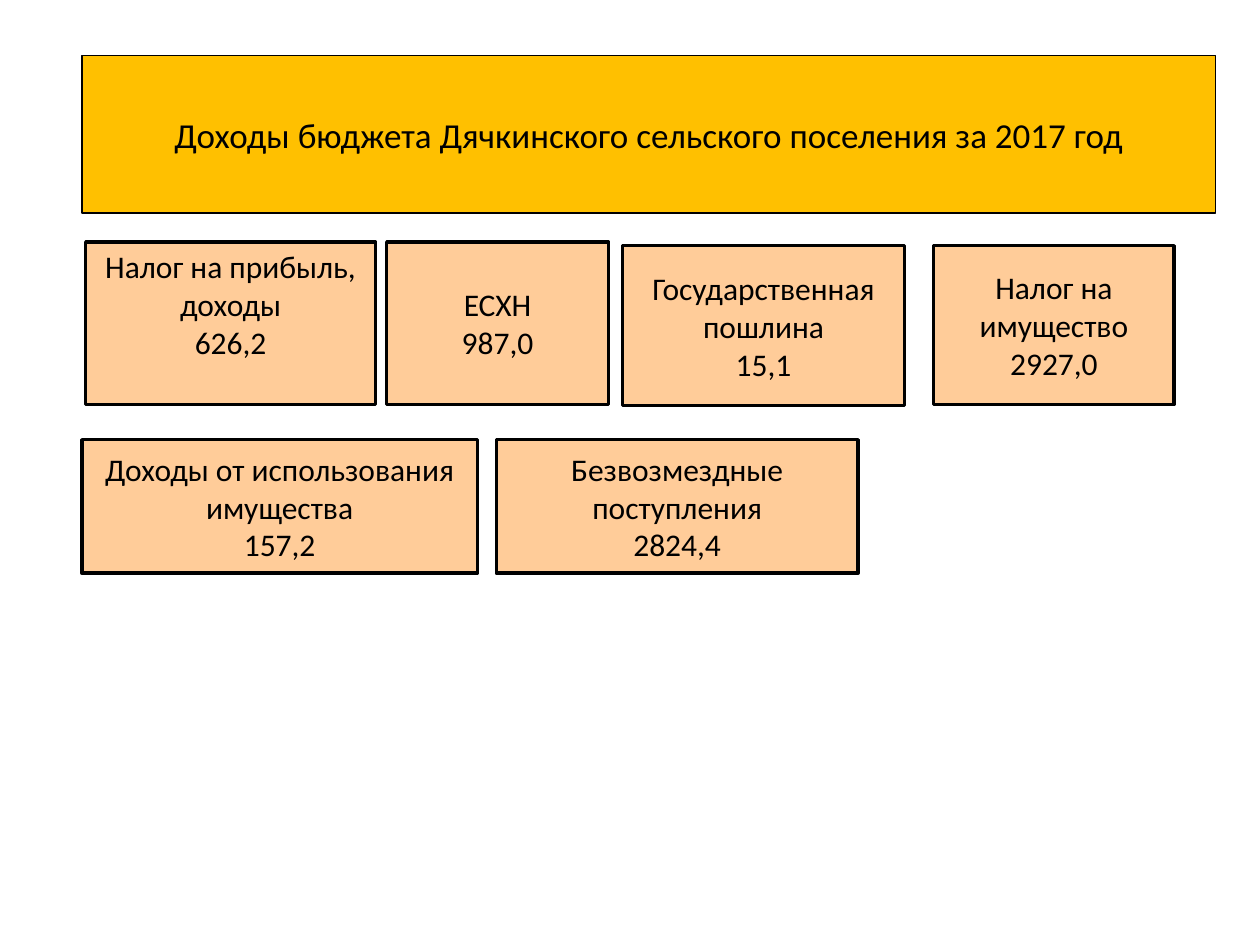
import pptx
import pptx.util
import pptx.dml.color
import pptx.enum.shapes
import pptx.enum.text

Pt = pptx.util.Pt
BLACK = pptx.dml.color.RGBColor(0x00, 0x00, 0x00)
GOLD = pptx.dml.color.RGBColor(0xFF, 0xC0, 0x00)
PEACH = pptx.dml.color.RGBColor(0xFF, 0xCC, 0x99)

TITLE = "Доходы бюджета Дячкинского сельского поселения за 2017 год"
INCOMES = [
    ("Налог на прибыль, доходы", "626,2", (49, 138.2, 165.6, 92.9), 25.6),
    ("ЕСХН", "987,0", (221, 138.2, 126.7, 92.9), 3.6),
    ("Государственная пошлина", "15,1", (355.7, 140.4, 161.3, 91.4), 3.6),
    ("Налог на имущество", "2927,0", (533.5, 140.4, 137.5, 90.7), 3.6),
    ("Доходы от использования имущества", "157,2", (46.8, 251.3, 226.1, 76.3), 3.6),
    ("Безвозмездные поступления", "2824,4", (283.7, 251.3, 206.6, 76.3), 3.6),
]


def apply(target, values):
    """Set each attribute named in values on the target."""
    for name, value in values.items():
        setattr(target, name, value)


def paint(box, fill, line_width):
    """Give a box its solid fill and black outline."""
    box.fill.solid()
    box.fill.fore_color.rgb = fill
    box.line.color.rgb = BLACK
    box.line.width = Pt(line_width)


def write(box, lines, size, bottom=3.6):
    """Write centred paragraphs into a box."""
    frame = box.text_frame
    apply(frame, {
        "word_wrap": True,
        "auto_size": pptx.enum.text.MSO_AUTO_SIZE.NONE,
        "vertical_anchor": pptx.enum.text.MSO_ANCHOR.MIDDLE,
        "margin_bottom": Pt(bottom),
    })
    frame.text = "\n".join(lines)
    for para in frame.paragraphs:
        para.alignment = pptx.enum.text.PP_ALIGN.CENTER
        for span in para.runs:
            apply(span.font, {"name": "Calibri", "size": Pt(size)})
            span.font.color.rgb = BLACK


def add_title(page):
    """Fill and format the title placeholder."""
    title = page.shapes.title
    apply(title, {"left": Pt(46.8), "top": Pt(31.7), "width": Pt(648), "height": Pt(90)})
    paint(title, GOLD, 0.75)
    write(title, [TITLE], 20)


def add_income(page, name, amount, bounds, bottom):
    """Add one income box with its name and amount."""
    box = page.shapes.add_shape(
        pptx.enum.shapes.MSO_SHAPE.RECTANGLE, *(Pt(length) for length in bounds))
    box.shadow.inherit = False
    paint(box, PEACH, 2)
    write(box, [name, amount], 18, bottom)


def main():
    """Build the budget income slide."""
    deck = pptx.Presentation()
    apply(deck, {"slide_width": Pt(720), "slide_height": Pt(540)})
    page = deck.slides.add_slide(deck.slide_layouts[5])
    add_title(page)
    for income in INCOMES:
        add_income(page, *income)
    deck.save("out.pptx")


if __name__ == "__main__":
    main()
